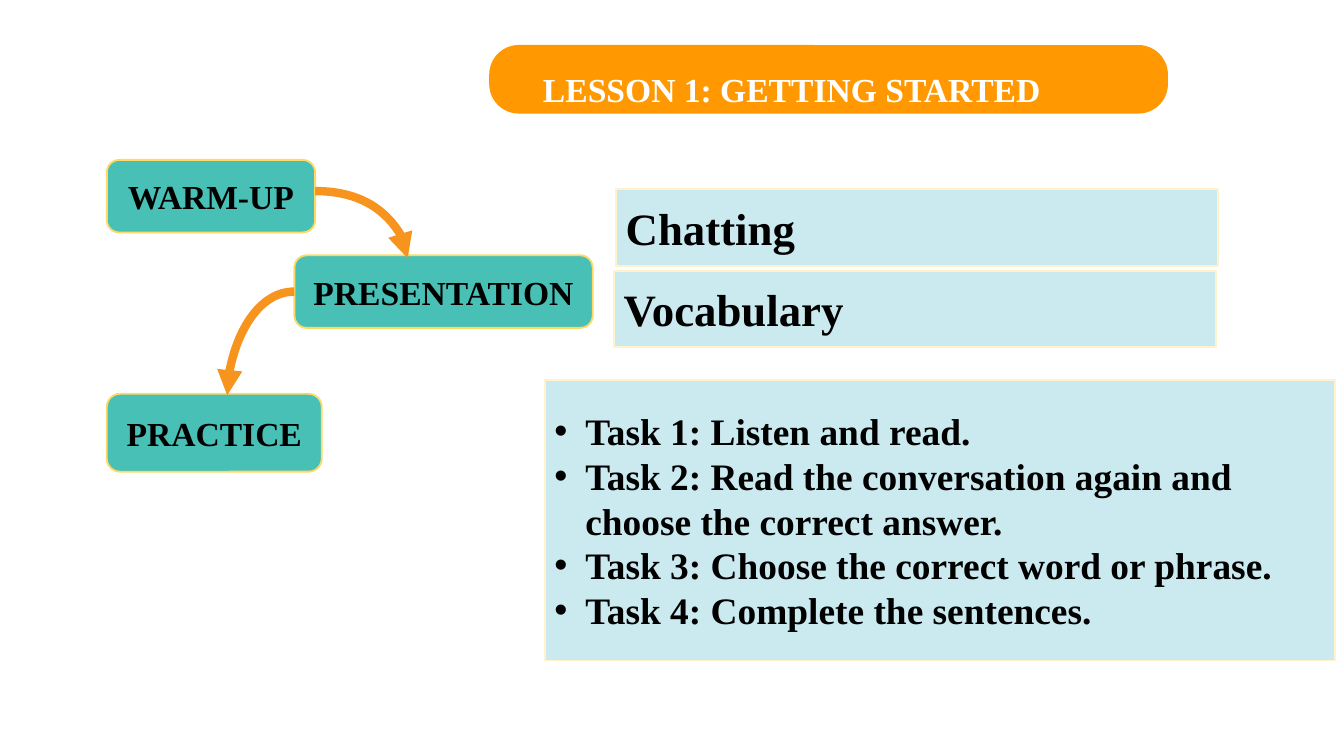
from dataclasses import dataclass

from lxml.etree import SubElement
from pptx import Presentation
from pptx.dml.color import RGBColor
from pptx.enum.shapes import MSO_CONNECTOR, MSO_SHAPE
from pptx.enum.text import MSO_ANCHOR, MSO_AUTO_SIZE, PP_ALIGN
from pptx.oxml.ns import qn
from pptx.util import Inches, Pt


@dataclass(frozen=True)
class Theme:
    """Colours, font and type sizes."""
    font: str = "Times New Roman"
    ink: str = "000000"
    white: str = "FFFFFF"
    teal: str = "48C0B6"
    gold: str = "FFD966"
    cream: str = "FFF2CC"
    sky: str = "CBEAF0"
    amber: str = "FF9801"
    arrow: str = "F7941E"
    small: int = 18
    mid: int = 20
    large: int = 24


@dataclass(frozen=True)
class Box:
    """An area measured in grid cells of a tenth of an inch."""
    x: float
    y: float
    w: float
    h: float

    def sub(self, x, y, w, h):
        """Return a box offset from this one's corner."""
        return Box(self.x + x, self.y + y, w, h)

    def spot(self, across, down):
        """Return the point at the given shares of the box."""
        return cell(self.x + self.w * across), cell(self.y + self.h * down)

    def size(self):
        """Return left, top, width and height as lengths."""
        return [cell(n) for n in (self.x, self.y, self.w, self.h)]


THEME = Theme()


def cell(count):
    """Turn grid cells into a length."""
    return Inches(count / 10)


def tint(code):
    """Turn a hex code into a colour."""
    return RGBColor.from_string(code)


def paint(shape, fill, edge=None):
    """Give a shape its fill and outline."""
    shape.fill.solid()
    shape.fill.fore_color.rgb = tint(fill)
    if edge:
        shape.line.color.rgb = tint(edge)
        shape.line.width = Pt(1)
    else:
        shape.line.fill.background()


def write(shape, *lines, size=THEME.small, color=THEME.ink, align=PP_ALIGN.LEFT,
          anchor=MSO_ANCHOR.MIDDLE, dots=False):
    """Fill a shape with bold paragraphs."""
    frame = shape.text_frame
    frame.word_wrap = True
    frame.auto_size = MSO_AUTO_SIZE.NONE
    frame.vertical_anchor = anchor
    frame.margin_left = frame.margin_right = Inches(0.07)
    frame.margin_top = frame.margin_bottom = Inches(0.04)
    frame.text = "\n".join(lines)
    for para in frame.paragraphs:
        para.alignment = align
        para.space_before = Pt(0)
        for run in para.runs:
            font = run.font
            font.name, font.size, font.bold = THEME.font, Pt(size), True
            font.color.rgb = tint(color)
        if dots:
            props = para._p.get_or_add_pPr()
            props.set("marL", str(Inches(0.23)))
            props.set("indent", str(-Inches(0.23)))
            SubElement(props, qn("a:buFont"), typeface="Arial")
            SubElement(props, qn("a:buChar"), char="•")


def block(slide, box, fill, edge=None, bend=None):
    """Add a plain or rounded rectangle."""
    kind = MSO_SHAPE.ROUNDED_RECTANGLE if bend else MSO_SHAPE.RECTANGLE
    shape = slide.shapes.add_shape(kind, *box.size())
    shape.shadow.inherit = False
    if bend:
        shape.adjustments[0] = bend
    paint(shape, fill, edge)
    return shape


def place(slide, holder, box):
    """Put a placeholder in a box, in front of the rest."""
    holder.left, holder.top, holder.width, holder.height = box.size()
    slide.shapes._spTree.append(holder._element)


def link(slide, start, end):
    """Draw a curved arrow between two points."""
    curve = slide.shapes.add_connector(MSO_CONNECTOR.CURVE, *start, *end)
    curve.line.color.rgb = tint(THEME.arrow)
    curve.line.width = Pt(4.5)
    props = curve._element.spPr
    props.find(qn("a:prstGeom")).set("prst", "curvedConnector2")
    SubElement(props.find(qn("a:ln")), qn("a:tailEnd"), type="triangle")
    SubElement(props, qn("a:effectLst"))


def header(slide, box):
    """Build the banner and its title."""
    block(slide, box, THEME.amber, bend=0.43)
    title = slide.shapes.title
    place(slide, title, box.sub(3.3, 1.4, 45.7, 3.8))
    write(title, "LESSON 1: GETTING STARTED", color=THEME.white, anchor=MSO_ANCHOR.TOP)


def flow(slide, box):
    """Build the lesson stages and the arrows between them."""
    warm = box.sub(0, 0, 15.5, 5.4)
    present = box.sub(13.95, 7.1, 22.2, 5.4)
    drill = box.sub(0, 17.4, 16, 5.8)
    stages = (("WARM-UP", warm), ("PRESENTATION", present), ("PRACTICE", drill))
    for name, area in stages:
        shape = block(slide, area, THEME.teal, THEME.gold, bend=0.17)
        write(shape, name, align=PP_ALIGN.CENTER)
    link(slide, warm.spot(1, 0.43), present.spot(0.38, 0.04))
    link(slide, present.spot(0, 0.5), drill.spot(0.56, 0.02))


def topics(slide, box):
    """Build the stacked topic bars."""
    for row, name in enumerate(("Chatting", "Vocabulary")):
        area = box.sub(-0.15 * row, 6.05 * row, box.w, 5.7)
        write(block(slide, area, THEME.sky, THEME.cream), name, size=THEME.large)


def tasks(slide, box):
    """Build the list of practice tasks."""
    body = slide.placeholders[1]
    place(slide, body, box)
    paint(body, THEME.sky, THEME.cream)
    write(body,
          "Task 1: Listen and read.",
          "Task 2: Read the conversation again and choose the correct answer.",
          "Task 3: Choose the correct word or phrase.",
          "Task 4: Complete the sentences.",
          size=THEME.mid, dots=True)


def main():
    """Build and save the slide."""
    deck = Presentation()
    deck.slide_width, deck.slide_height = cell(100), cell(56.25)
    slide = deck.slides.add_slide(deck.slide_layouts[1])
    flow(slide, Box(7.95, 11.9, 36.15, 23.2))
    header(slide, Box(36.4, 3.35, 50.5, 5.1))
    topics(slide, Box(45.85, 14.1, 44.8, 11.75))
    tasks(slide, Box(40.55, 28.25, 58.8, 20.9))
    deck.save("out.pptx")


if __name__ == "__main__":
    main()
